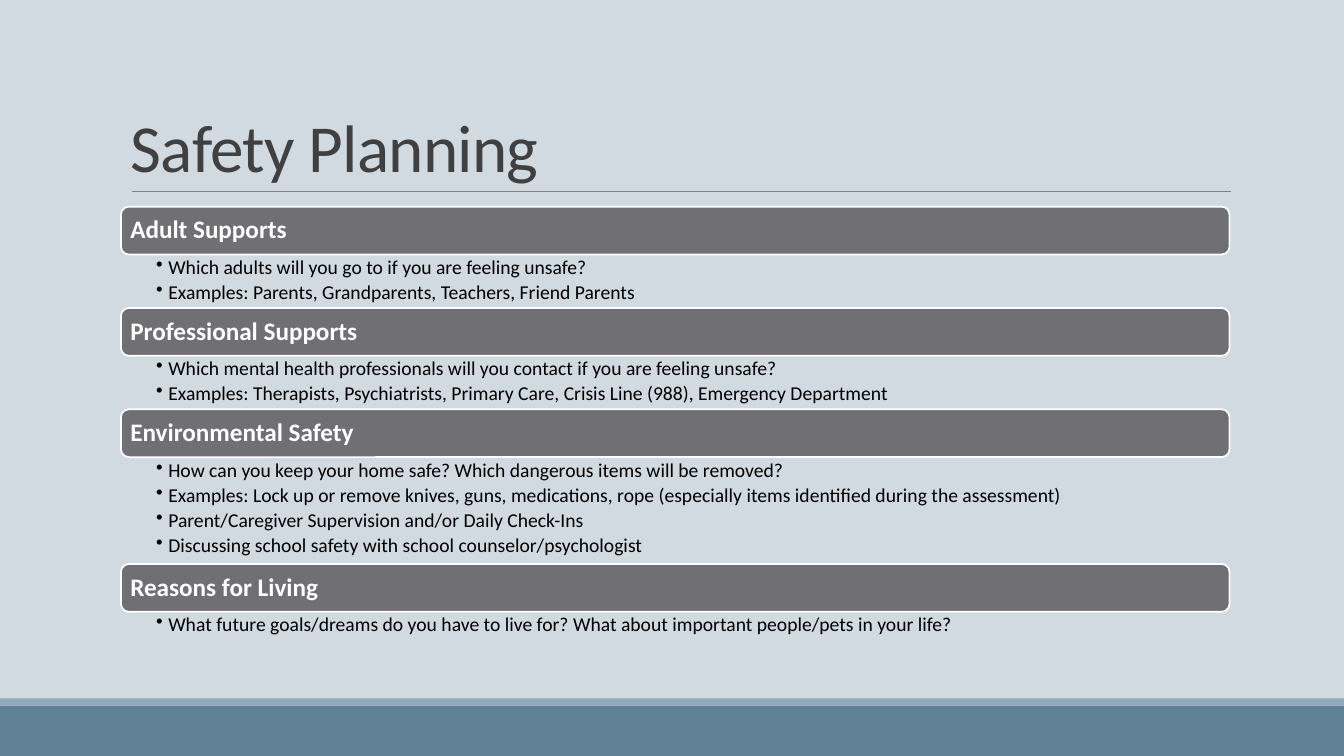
from lxml.etree import SubElement as Sub
from pptx import Presentation
from pptx.dml.color import RGBColor as RGB
from pptx.enum.shapes import MSO_CONNECTOR as Link, MSO_SHAPE as Form
from pptx.enum.text import MSO_ANCHOR as Anchor, PP_ALIGN as Align
from pptx.oxml.ns import qn
from pptx.util import Pt

SCALE = 4572
PALE = RGB(0xD1, 0xD9, 0xE1)
BLUE = RGB(0x61, 0x81, 0x97)
MIST = RGB(0x92, 0xA9, 0xB9)
RULE = RGB(0x80, 0x80, 0x80)
INK = RGB(0x40, 0x40, 0x40)
GRAY = RGB(0x6F, 0x6F, 0x74)
WHITE = RGB(0xFF, 0xFF, 0xFF)
BLACK = RGB(0, 0, 0)

LEFT, WIDTH, BAR, ROW = 240, 2200, 95, 53
PLAN = [
    ("Adult Supports", [
        "Which adults will you go to if you are feeling unsafe?",
        "Examples: Parents, Grandparents, Teachers, Friend Parents",
    ]),
    ("Professional Supports", [
        "Which mental health professionals will you contact if you are feeling unsafe?",
        "Examples: Therapists, Psychiatrists, Primary Care, Crisis Line (988), Emergency Department",
    ]),
    ("Environmental Safety", [
        "How can you keep your home safe? Which dangerous items will be removed?",
        "Examples: Lock up or remove knives, guns, medications, rope (especially items identified during the assessment)",
        "Parent/Caregiver Supervision and/or Daily Check-Ins",
        "Discussing school safety with school counselor/psychologist",
    ]),
    ("Reasons for Living", [
        "What future goals/dreams do you have to live for? What about important people/pets in your life?",
    ]),
]


def px(*nums):
    return [num * SCALE for num in nums]


def put(item, style):
    for name, value in style.items():
        setattr(item, name, value)


class Deck:
    font = "Calibri"

    def __init__(self, width, height):
        self.file = Presentation()
        put(self.file, {"slide_width": width * SCALE, "slide_height": height * SCALE})
        self.slide = self.file.slides.add_slide(self.file.slide_layouts[6])
        self.shapes = self.slide.shapes

    def back(self, color):
        fill = self.slide.background.fill
        fill.solid()
        fill.fore_color.rgb = color

    def box(self, form, area, color, edge=None):
        shape = self.shapes.add_shape(form, *px(*area))
        shape.shadow.inherit = False
        shape.fill.solid()
        shape.fill.fore_color.rgb = color
        if edge:
            shape.line.color.rgb = edge
            shape.line.width = Pt(1.25)
        else:
            shape.line.fill.background()
        return shape

    def rule(self, start, end, color):
        line = self.shapes.add_connector(Link.STRAIGHT, *px(*start, *end))
        line.line.color.rgb = color
        line.line.width = Pt(0.5)
        Sub(line._element.spPr, qn("a:effectLst"))

    def text(self, shape, lines, size, color, inset, anchor, para, bold=False):
        frame = shape.text_frame
        sides = ("margin_left", "margin_top", "margin_right", "margin_bottom")
        put(frame, {"word_wrap": True, "vertical_anchor": anchor, "text": "\n".join(lines)})
        put(frame, dict(zip(sides, px(*inset))))
        for item in frame.paragraphs:
            put(item, {"alignment": Align.LEFT, **para})
            font = item.runs[0].font
            put(font, {"name": self.font, "size": Pt(size), "bold": bold})
            font.color.rgb = color
        return frame.paragraphs

    def title(self, text, area):
        box = self.shapes.add_textbox(*px(*area))
        paras = self.text(box, [text], 48, INK, (20, 10, 20, 10), Anchor.BOTTOM,
                          {"line_spacing": 0.85})
        paras[0].runs[0]._r.get_or_add_rPr().set("spc", "-50")

    def head(self, text, area):
        bar = self.box(Form.ROUNDED_RECTANGLE, area, GRAY, WHITE)
        self.text(bar, [text], 18, WHITE, (14, 14, 14, 14), Anchor.MIDDLE,
                  {"line_spacing": 0.9}, True)

    def list(self, lines, area):
        box = self.shapes.add_textbox(*px(*area))
        paras = self.text(box, lines, 14, BLACK, (70, 6, 28, 6), Anchor.TOP,
                          {"level": 1, "line_spacing": 0.9, "space_after": Pt(2.8)})
        for para in paras:
            props = para._p.get_or_add_pPr()
            props.set("marL", str(24 * SCALE))
            props.set("indent", str(-24 * SCALE))
            Sub(props, qn("a:buChar"), char="•")


def main():
    deck = Deck(2667, 1500)
    deck.back(PALE)
    deck.box(Form.RECTANGLE, (0, 1400, 2667, 100), BLUE)
    deck.box(Form.RECTANGLE, (0, 1386, 2667, 14), MIST)
    deck.rule((262, 380), (2442, 380), RULE)
    deck.title("Safety Planning", (LEFT, 62, WIDTH, 318))
    top = 410
    for name, lines in PLAN:
        deck.head(name, (LEFT, top, WIDTH, BAR))
        high = max(66, ROW * len(lines))
        deck.list(lines, (LEFT, top + BAR, WIDTH, high))
        top += BAR + high
    deck.file.save("out.pptx")


if __name__ == "__main__":
    main()
